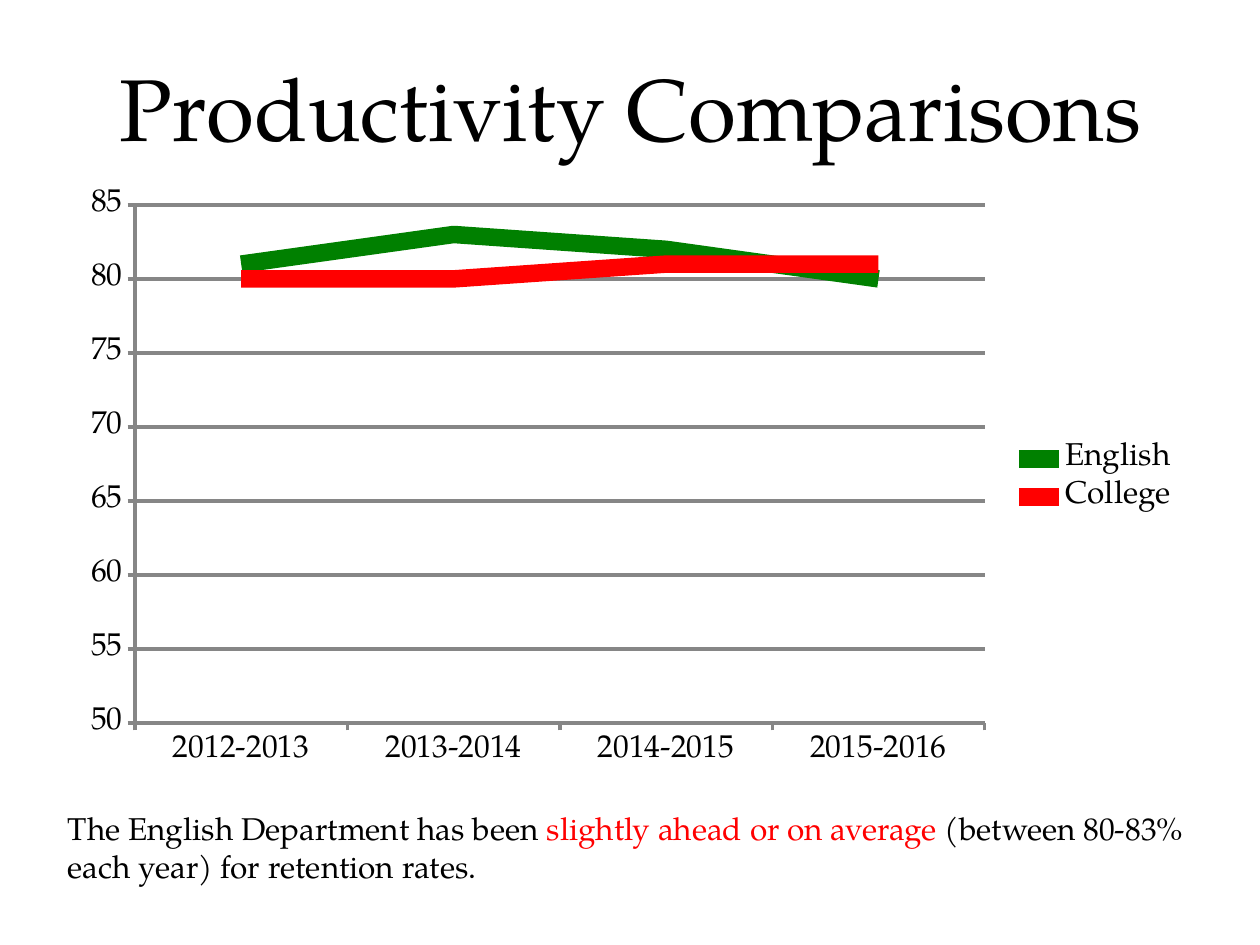
"""Build the Productivity Comparisons slide with a line chart and a caption."""
from dataclasses import dataclass

import pptx
import pptx.chart.data
import pptx.dml.color
import pptx.enum.chart
import pptx.enum.text
import pptx.oxml
import pptx.oxml.ns
import pptx.util

FONT = "TeX Gyre Pagella"
BLACK, RED, GREEN, GREY = "000000", "FF0000", "008000", "868686"
WIDTH, HEIGHT = 10, 7.5


@dataclass(frozen=True)
class Area:
    """A rectangle given as shares of the slide's size."""
    left: float
    top: float
    width: float
    height: float

    def lengths(self) -> tuple:
        """Return left, top, width and height as lengths."""
        return (pptx.util.Inches(self.left * WIDTH), pptx.util.Inches(self.top * HEIGHT),
                pptx.util.Inches(self.width * WIDTH), pptx.util.Inches(self.height * HEIGHT))


@dataclass(frozen=True)
class TextRun:
    """A stretch of text in one colour."""
    text: str
    color: str = BLACK


@dataclass(frozen=True)
class Trend:
    """One line of the chart."""
    name: str
    values: tuple
    color: str


TITLE_AREA = Area(0.055, 0.0133, 0.891, 0.1547)
CHART_AREA = Area(0.055, 0.188, 0.891, 0.636)
CAPTION_AREA = Area(0.044, 0.8493, 0.927, 0.0947)
PLOT_SHARES = {"x": 0.0585, "y": 0.0455, "w": 0.757, "h": 0.862}
YEARS = [f"{year}-{year + 1}" for year in range(2012, 2016)]
TRENDS = [Trend("English", (81, 83, 82, 80), GREEN),
          Trend("College", (80, 80, 81, 81), RED)]
TITLE = [TextRun("Productivity Comparisons")]
CAPTION = [TextRun("The English Department has been "),
           TextRun("slightly ahead or on average ", RED),
           TextRun("(between 80-83% each year) for retention rates.")]


def rgb(color: str) -> pptx.dml.color.RGBColor:
    """Turn a hex string into a colour."""
    return pptx.dml.color.RGBColor.from_string(color)


def style_font(font, size: float, color: str) -> None:
    """Set the face, size and colour of a font."""
    font.name = FONT
    font.size = pptx.util.Pt(size)
    font.color.rgb = rgb(color)


def style_line(line, width: float, color: str) -> None:
    """Set the width and colour of a line."""
    line.width = pptx.util.Pt(width)
    line.color.rgb = rgb(color)


def add_runs(paragraph, runs: list[TextRun], size: float) -> None:
    """Add the runs to a paragraph one by one."""
    for item in runs:
        run = paragraph.add_run()
        run.text = item.text
        style_font(run.font, size, item.color)


def fill_title(slide) -> None:
    """Place and fill the title placeholder."""
    title = slide.shapes.title
    title.left, title.top, title.width, title.height = TITLE_AREA.lengths()
    frame = title.text_frame
    frame.auto_size = pptx.enum.text.MSO_AUTO_SIZE.NONE
    frame.vertical_anchor = pptx.enum.text.MSO_ANCHOR.BOTTOM
    frame.margin_bottom = 0
    paragraph = frame.paragraphs[0]
    paragraph.alignment = pptx.enum.text.PP_ALIGN.CENTER
    add_runs(paragraph, TITLE, 50)


def fix_plot_area(chart) -> None:
    """Give the inner plot area its fixed shares of the chart."""
    plot_area = chart.element.chart.plotArea
    for layout in plot_area.findall(pptx.oxml.ns.qn("c:layout")):
        plot_area.remove(layout)
    modes = '<c:xMode val="edge"/><c:yMode val="edge"/>'
    shares = "".join(f'<c:{key} val="{value}"/>' for key, value in PLOT_SHARES.items())
    plot_area.insert(0, pptx.oxml.parse_xml(
        f'<c:layout {pptx.oxml.ns.nsdecls("c")}><c:manualLayout>'
        f'<c:layoutTarget val="inner"/>{modes}{shares}</c:manualLayout></c:layout>'))


def add_trend_chart(slide) -> None:
    """Add the line chart of retention by year."""
    data = pptx.chart.data.CategoryChartData()
    data.categories = YEARS
    for trend in TRENDS:
        data.add_series(trend.name, trend.values)
    chart = slide.shapes.add_chart(
        pptx.enum.chart.XL_CHART_TYPE.LINE, *CHART_AREA.lengths(), data).chart
    style_font(chart.font, 18, BLACK)
    chart.has_title = False
    chart.has_legend = True
    chart.legend.position = pptx.enum.chart.XL_LEGEND_POSITION.RIGHT
    chart.legend.include_in_layout = False
    chart.plots[0].vary_by_categories = False
    for series, trend in zip(chart.plots[0].series, TRENDS):
        series.smooth = False
        series.marker.style = pptx.enum.chart.XL_MARKER_STYLE.NONE
        style_line(series.format.line, 10, trend.color)
    for axis in (chart.category_axis, chart.value_axis):
        axis.major_tick_mark = pptx.enum.chart.XL_TICK_MARK.OUTSIDE
        axis.minor_tick_mark = pptx.enum.chart.XL_TICK_MARK.NONE
        style_line(axis.format.line, 2, GREY)
    values = chart.value_axis
    values.minimum_scale, values.maximum_scale, values.major_unit = 50, 85, 5
    values.has_major_gridlines = True
    style_line(values.major_gridlines.format.line, 2, GREY)
    fix_plot_area(chart)


def add_caption(slide) -> None:
    """Add the caption below the chart."""
    frame = slide.shapes.add_textbox(*CAPTION_AREA.lengths()).text_frame
    frame.word_wrap = True
    frame.auto_size = pptx.enum.text.MSO_AUTO_SIZE.SHAPE_TO_FIT_TEXT
    add_runs(frame.paragraphs[0], CAPTION, 18)


def main() -> None:
    """Build and save the presentation."""
    presentation = pptx.Presentation()
    presentation.slide_width = pptx.util.Inches(WIDTH)
    presentation.slide_height = pptx.util.Inches(HEIGHT)
    slide = presentation.slides.add_slide(presentation.slide_layouts.get_by_name("Title Only"))
    fill_title(slide)
    add_trend_chart(slide)
    add_caption(slide)
    presentation.save("out.pptx")


if __name__ == "__main__":
    main()
